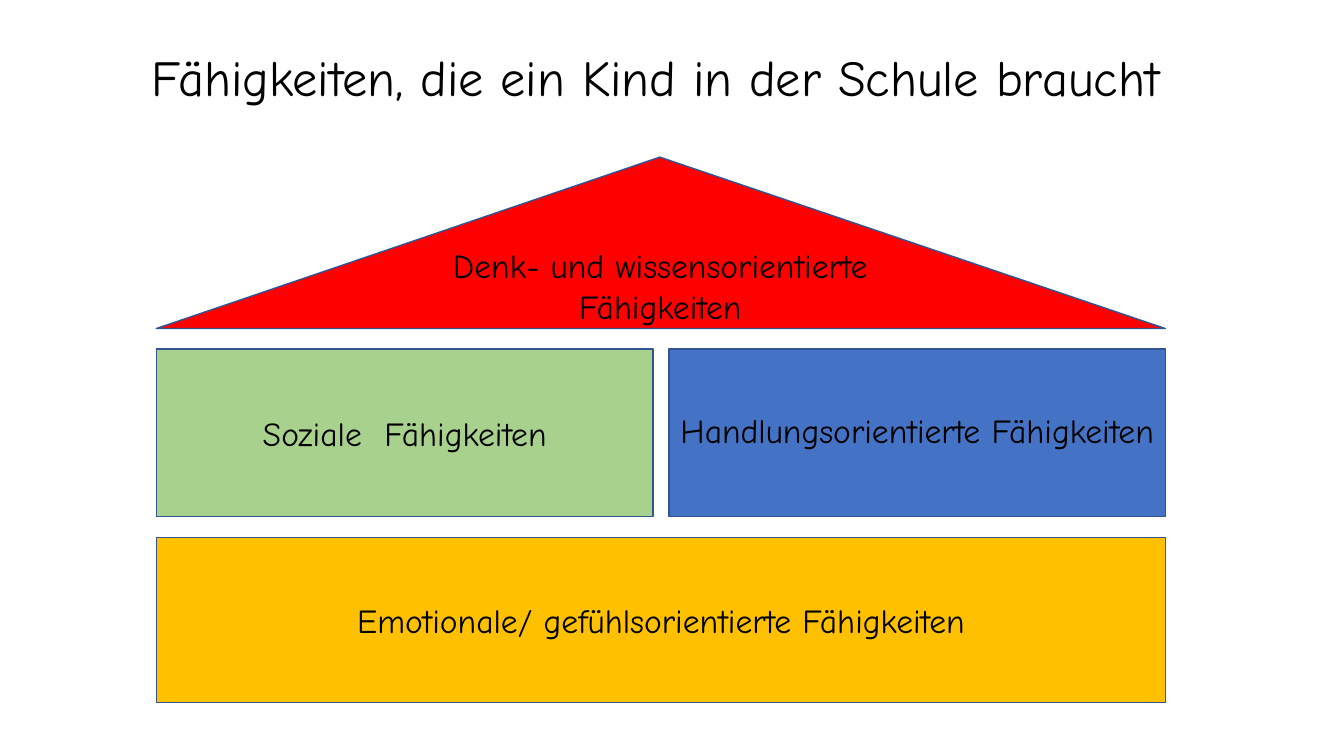
from dataclasses import dataclass

from pptx import Presentation
from pptx.dml.color import RGBColor
from pptx.enum.shapes import MSO_SHAPE
from pptx.enum.text import MSO_ANCHOR, MSO_AUTO_SIZE, PP_ALIGN
from pptx.util import Cm, Pt

TRIANGLE, RECT = MSO_SHAPE.ISOSCELES_TRIANGLE, MSO_SHAPE.RECTANGLE
MIDDLE, CENTER = MSO_ANCHOR.MIDDLE, PP_ALIGN.CENTER
GROW = MSO_AUTO_SIZE.SHAPE_TO_FIT_TEXT

# Content: storeys of the house from roof to base, as (height in cm, blocks)
TITLE = "Fähigkeiten, die ein Kind in der Schule braucht"
STOREYS = [
    (4.32, [(TRIANGLE, "roof", "Denk- und wissensorientierte Fähigkeiten", 1.0)]),
    (4.22, [(RECT, "social", "Soziale  Fähigkeiten", 1.0),
            (RECT, "action", "Handlungsorientierte Fähigkeiten", 0.9)]),
    (4.17, [(RECT, "base", "Emotionale/ gefühlsorientierte Fähigkeiten", 1.0)]),
]


@dataclass(frozen=True)
class Theme:
    font: str = "Comic Neue"
    title_size: int = 36
    block_size: int = 24
    text: str = "000000"
    outline: str = "325491"
    roof: str = "FF0000"
    social: str = "A9D18E"
    action: str = "4472C4"
    base: str = "FFC000"


THEME = Theme()

# Layout in cm
SLIDE_W, SLIDE_H = 33.87, 19.05
TITLE_BOX = (1.12, 1.04, 30.81, 1.8)
HOUSE_LEFT, HOUSE_TOP, HOUSE_W = 3.94, 3.96, 25.43
STOREY_GAP, BLOCK_GAP = 0.52, 0.4
ROOF_PEAK = 0.499


def add_text(tf, text, size, spacing=1.0):
    tf.word_wrap = True
    p = tf.paragraphs[0]
    p.alignment = CENTER
    p.line_spacing = spacing
    r = p.add_run()
    r.text = text
    r.font.name = THEME.font
    r.font.size = Pt(size)
    r.font.color.rgb = RGBColor.from_string(THEME.text)


def add_block(s, kind, box, fill, text, spacing):
    sp = s.shapes.add_shape(kind, *map(Cm, box))
    sp.shadow.inherit = False
    sp.fill.solid()
    sp.fill.fore_color.rgb = RGBColor.from_string(fill)
    sp.line.color.rgb = RGBColor.from_string(THEME.outline)
    sp.line.width = Pt(1)
    if kind == TRIANGLE:
        sp.adjustments[0] = ROOF_PEAK
    sp.text_frame.vertical_anchor = MIDDLE
    add_text(sp.text_frame, text, THEME.block_size, spacing)


def main():
    prs = Presentation()
    prs.slide_width, prs.slide_height = Cm(SLIDE_W), Cm(SLIDE_H)
    s = prs.slides.add_slide(prs.slide_layouts[6])

    # House: blocks share the width of their storey equally
    top = HOUSE_TOP
    for height, blocks in STOREYS:
        width = (HOUSE_W - BLOCK_GAP * (len(blocks) - 1)) / len(blocks)
        for i, (kind, color, text, spacing) in enumerate(blocks):
            left = HOUSE_LEFT + i * (width + BLOCK_GAP)
            add_block(s, kind, (left, top, width, height),
                      getattr(THEME, color), text, spacing)
        top += height + STOREY_GAP

    # Title
    tf = s.shapes.add_textbox(*map(Cm, TITLE_BOX)).text_frame
    tf.auto_size = GROW
    add_text(tf, TITLE, THEME.title_size)

    prs.save("out.pptx")


if __name__ == "__main__":
    main()
